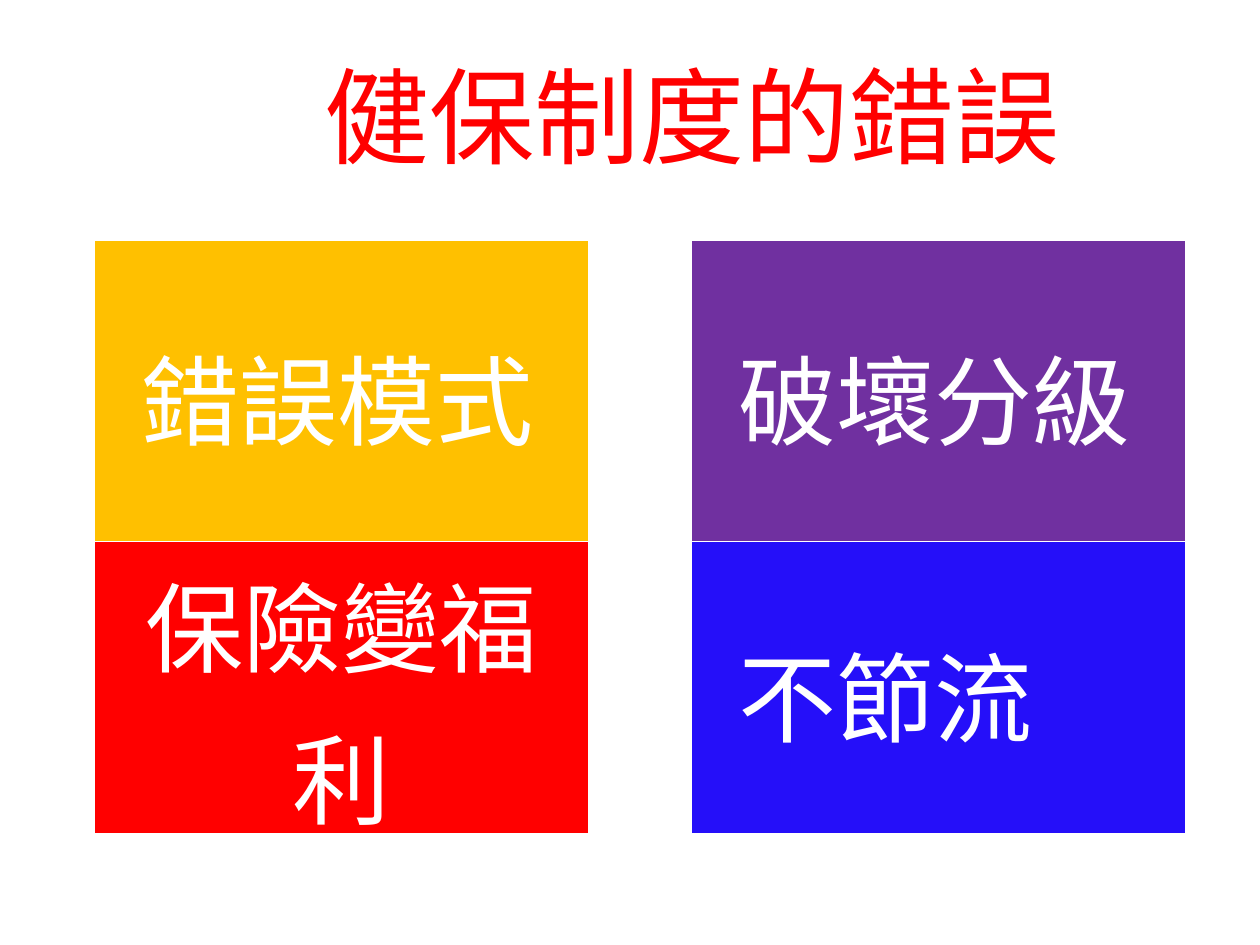
from dataclasses import dataclass

from lxml.etree import SubElement
from pptx import Presentation
from pptx.dml.color import RGBColor
from pptx.enum.text import MSO_ANCHOR, PP_ALIGN
from pptx.oxml.ns import qn
from pptx.util import Inches, Pt

WHITE = "FFFFFF"


@dataclass
class Fault:
    row: int
    col: int
    text: str
    fill: str
    align: PP_ALIGN = PP_ALIGN.JUSTIFY


FAULTS = [
    Fault(0, 0, "錯誤模式", "FFC000"),
    Fault(0, 2, "破壞分級", "7030A0"),
    Fault(1, 0, "保險變福利", "FF0000", PP_ALIGN.CENTER),
    Fault(1, 2, "不節流", "250FF9"),
]
COLS = [3.92, 0.82, 3.92]
ROWS = [2.39, 2.32]


def color(code: str) -> RGBColor:
    return RGBColor.from_string(code)


def style(para, size: float, name: str, code: str) -> None:
    for run in para.runs:
        run.font.size = Pt(size)
        run.font.name = name
        run.font.color.rgb = color(code)


def edge(cell, sides: str) -> None:
    """Draw 1 pt white borders; call before the cell is filled."""
    props = cell._tc.get_or_add_tcPr()
    for side in sides:
        line = SubElement(props, qn(f"a:ln{side}"), w=str(Pt(1)))
        fill = SubElement(line, qn("a:solidFill"))
        SubElement(fill, qn("a:srgbClr"), val=WHITE)


def draw_fault(table, fault: Fault) -> None:
    cell = table.cell(fault.row, fault.col)
    edge(cell, "LRTB")
    cell.fill.solid()
    cell.fill.fore_color.rgb = color(fault.fill)
    cell.margin_left = cell.margin_right = Inches(0.37)
    cell.margin_top = cell.margin_bottom = 0
    cell.vertical_anchor = MSO_ANCHOR.MIDDLE
    para = cell.text_frame.paragraphs[0]
    para.text = fault.text
    para.alignment = fault.align
    para.line_spacing = 1.07
    style(para, 56, "Calibri", WHITE)


def draw_title(slide) -> None:
    box = slide.shapes.add_textbox(
        Inches(2.48), Inches(0.36), Inches(6.38), Inches(1.11))
    frame = box.text_frame
    frame.word_wrap = True
    frame.text = "健保制度的錯誤"
    style(frame.paragraphs[0], 60, "Lato", "FF0000")


def draw_table(slide) -> None:
    table = slide.shapes.add_table(
        len(ROWS), len(COLS), Inches(0.75), Inches(1.91),
        Inches(sum(COLS)), Inches(sum(ROWS))).table
    table.first_row = table.horz_banding = False
    for col, width in zip(table.columns, COLS):
        col.width = Inches(width)
    for row, height in zip(table.rows, ROWS):
        row.height = Inches(height)
    for fault in FAULTS:
        draw_fault(table, fault)
    for row in range(len(ROWS)):
        gap = table.cell(row, 1)
        edge(gap, "LR")
        gap.fill.background()


def main() -> None:
    deck = Presentation()
    deck.slide_width, deck.slide_height = Inches(10), Inches(7.5)
    slide = deck.slides.add_slide(deck.slide_layouts[6])
    draw_title(slide)
    draw_table(slide)
    deck.save("out.pptx")


if __name__ == "__main__":
    main()
